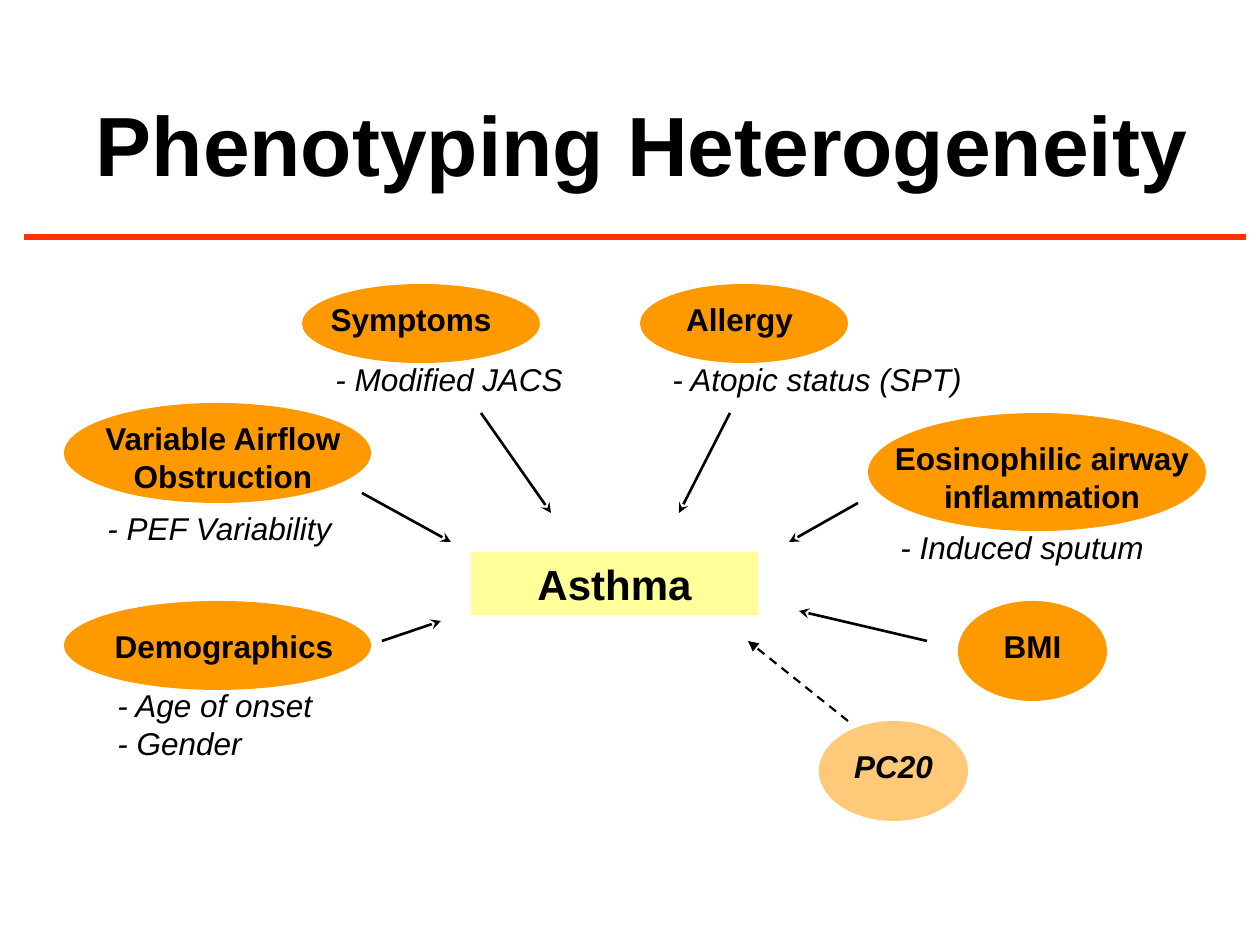
from lxml import etree
from pptx import Presentation
from pptx.dml.color import RGBColor
from pptx.enum.dml import MSO_LINE
from pptx.enum.shapes import MSO_CONNECTOR, MSO_SHAPE
from pptx.enum.text import MSO_ANCHOR, PP_ALIGN
from pptx.oxml.ns import qn
from pptx.util import Emu, Pt

PX = 914400 / 126
FONT = "Arial"
COLORS = {"text": "000000", "topic": "FF9900", "center": "FFFF99", "rule": "FF3300"}
OVAL, RECTANGLE = MSO_SHAPE.OVAL, MSO_SHAPE.RECTANGLE
STRAIGHT = MSO_CONNECTOR.STRAIGHT
LEFT, CENTER = PP_ALIGN.LEFT, PP_ALIGN.CENTER
TOP, MIDDLE = MSO_ANCHOR.TOP, MSO_ANCHOR.MIDDLE
DASH = MSO_LINE.DASH

# Ellipse box, label, label box and notes with their box; inner boxes are offsets.
TOPICS = [
    ((64, 403, 307, 100), "Variable Airflow Obstruction", (0, 10, 318, 88),
     ["- PEF Variability"], (31, 100, 287, 50)),
    ((640, 284, 208, 79), "Allergy", (20, 10, 159, 50),
     ["- Atopic status (SPT)"], (20, 70, 358, 50)),
    ((868, 413, 338, 118), "Eosinophilic airway inflammation", (0, 20, 348, 88),
     ["- Induced sputum"], (20, 109, 287, 50)),
    ((302, 284, 238, 79), "Symptoms", (10, 10, 198, 50),
     ["- Modified JACS"], (21, 70, 287, 50)),
    ((64, 601, 307, 89), "Demographics", (31, 20, 258, 50),
     ["- Age of onset", "- Gender"], (41, 79, 277, 88)),
    ((958, 601, 149, 100), "BMI", (10, 20, 129, 50), [], None),
]
ARROWS = [
    (362, 493, 451, 542),
    (481, 413, 551, 513),
    (730, 413, 679, 513),
    (858, 503, 789, 542),
    (382, 641, 441, 621),
    (927, 641, 799, 611),
]


def px(*lengths):
    return [Emu(round(length * PX)) for length in lengths]


def inside(box, offset):
    """Turn a box given relative to another box into slide coordinates."""
    return (box[0] + offset[0], box[1] + offset[1], offset[2], offset[3])


def write_text(shape, lines, size, align=CENTER, anchor=TOP, bold=False, italic=False):
    """Write the lines as one paragraph with line breaks."""
    frame = shape.text_frame
    frame.word_wrap = True
    frame.vertical_anchor = anchor
    paragraph = frame.paragraphs[0]
    paragraph.alignment = align
    for index, line in enumerate(lines):
        if index:
            paragraph.add_line_break()
        run = paragraph.add_run()
        run.text = line
        run.font.name = FONT
        run.font.size = Pt(size)
        run.font.bold = bold
        run.font.italic = italic
        run.font.color.rgb = RGBColor.from_string(COLORS["text"])


def add_text(slide, box, lines, size=18, **style):
    write_text(slide.shapes.add_textbox(*px(*box)), lines, size, **style)


def add_filled_shape(slide, kind, box, color, opacity=100):
    shape = slide.shapes.add_shape(kind, *px(*box))
    shape.shadow.inherit = False
    shape.fill.solid()
    shape.fill.fore_color.rgb = RGBColor.from_string(COLORS[color])
    shape.line.fill.background()
    if opacity < 100:
        fill_color = shape.fill._xPr.find(qn("a:solidFill"))[0]
        etree.SubElement(fill_color, qn("a:alpha"), val=str(opacity * 1000))
    return shape


def add_line(slide, ends, color="text", width=1.5, head=None, dash=None):
    connector = slide.shapes.add_connector(STRAIGHT, *px(*ends))
    connector.line.color.rgb = RGBColor.from_string(COLORS[color])
    connector.line.width = Pt(width)
    if dash:
        connector.line.dash_style = dash
    if head:
        etree.SubElement(connector.line._get_or_add_ln(), qn("a:tailEnd"), type=head)
    etree.SubElement(connector._element.spPr, qn("a:effectLst"))


def add_header(slide, box):
    add_text(slide, inside(box, (39, 0, 1158, 101)), ["Phenotyping Heterogeneity"],
             size=48, anchor=MIDDLE, bold=True)
    left, top, width, height = box
    add_line(slide, (left, top + height, left + width, top + height), "rule", 3)


def add_topic(slide, box, label, label_box, notes, notes_box, opacity=100, italic=False):
    """Place an ellipse with its label and the measures noted below it."""
    add_filled_shape(slide, OVAL, box, "topic", opacity)
    add_text(slide, inside(box, label_box), [label], bold=True, italic=italic)
    if notes:
        add_text(slide, inside(box, notes_box), notes, align=LEFT, italic=True)


def add_center(slide, box):
    shape = add_filled_shape(slide, RECTANGLE, box, "center")
    write_text(shape, ["Asthma"], 24, bold=True)


def main():
    presentation = Presentation()
    presentation.slide_width, presentation.slide_height = px(1260, 945)
    slide = presentation.slides.add_slide(presentation.slide_layouts[6])

    add_center(slide, (471, 552, 287, 63))
    for topic in TOPICS:
        add_topic(slide, *topic)
    for ends in ARROWS:
        add_line(slide, ends, head="stealth")
    add_topic(slide, (819, 721, 149, 100), "PC20", (10, 20, 129, 50), [], None,
              opacity=52, italic=True)
    add_line(slide, (848, 721, 748, 641), width=1.25, head="triangle", dash=DASH)
    add_header(slide, (24, 92, 1222, 145))

    presentation.save("out.pptx")


if __name__ == "__main__":
    main()
